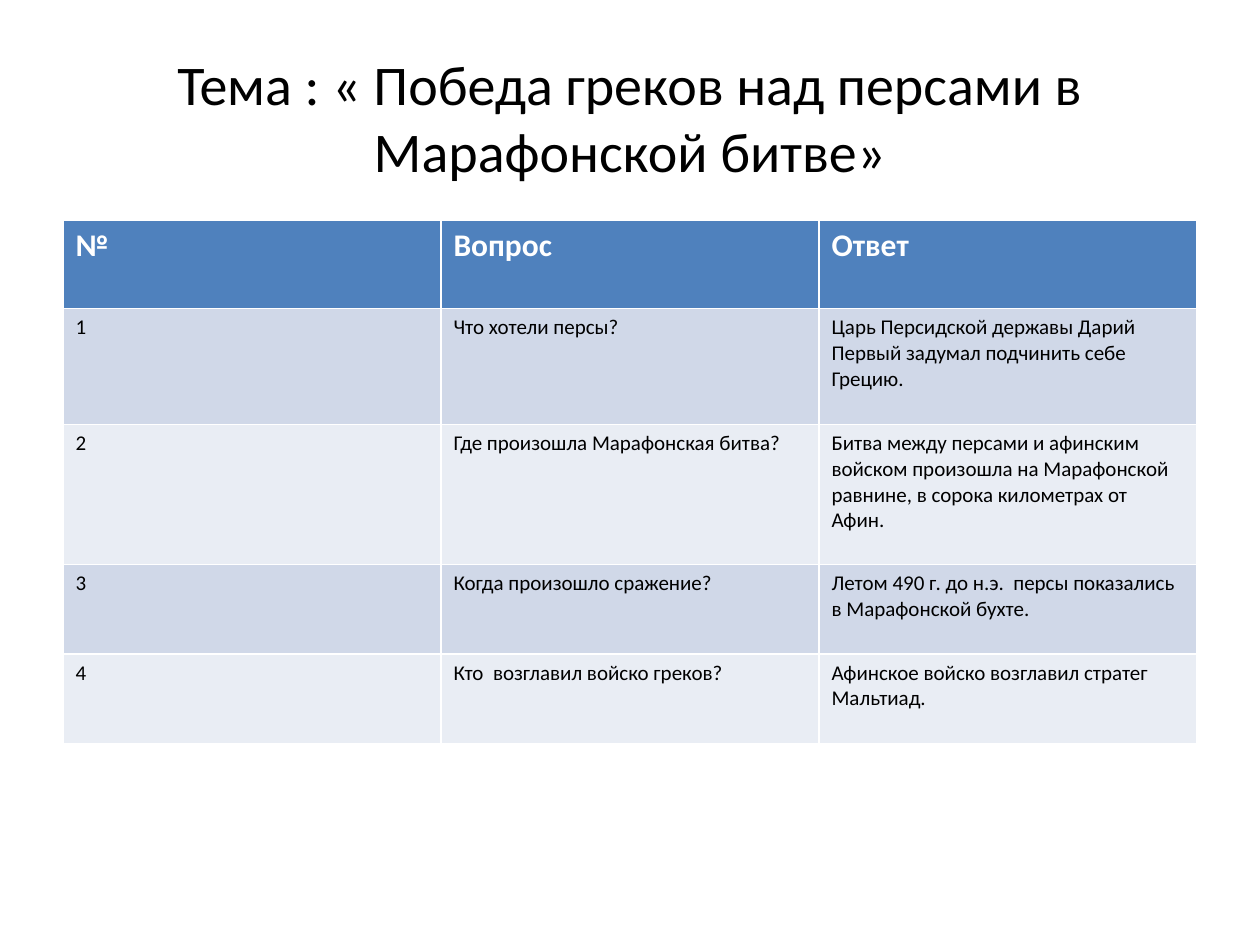
from pptx import Presentation
from pptx.dml.color import RGBColor
from pptx.enum.text import MSO_ANCHOR, PP_ALIGN
from pptx.util import Inches, Pt

CENTER = PP_ALIGN.CENTER
LEFT = PP_ALIGN.LEFT
MIDDLE = MSO_ANCHOR.MIDDLE
COLORS = {
    "text": "000000",
    "header_text": "FFFFFF",
    "header": "4F81BD",
    "odd_row": "D0D8E8",
    "even_row": "E9EDF4",
}
FORMATS = {
    "title": {"size": Pt(32), "bold": False, "name": "Calibri"},
    "header": {"size": Pt(18), "bold": True, "name": "Calibri"},
    "body": {"size": Pt(12), "bold": False, "name": "Calibri"},
}
TITLE = "Тема : « Победа греков над персами в Марафонской битве»"
ROWS = [
    ("№", "Вопрос", "Ответ"),
    ("1", "Что хотели персы?",
     "Царь Персидской державы Дарий Первый задумал подчинить себе  Грецию."),
    ("2", "Где произошла Марафонская битва?",
     "Битва между персами и афинским войском произошла на Марафонской "
     "равнине, в сорока километрах от Афин."),
    ("3", "Когда произошло сражение?",
     "Летом 490 г. до н.э.  персы показались в Марафонской бухте."),
    ("4", "Кто  возглавил войско греков?",
     "Афинское войско возглавил стратег Мальтиад."),
]
ROW_HEIGHTS = [0.7, 0.92, 1.11, 0.71, 0.71]


def write_text(text_frame, text, format_name, color_name, alignment):
    paragraph = text_frame.paragraphs[0]
    paragraph.alignment = alignment
    run = paragraph.add_run()
    run.text = text
    for attribute, value in FORMATS[format_name].items():
        setattr(run.font, attribute, value)
    run.font.color.rgb = RGBColor.from_string(COLORS[color_name])


presentation = Presentation()
presentation.slide_width = Inches(10)
presentation.slide_height = Inches(7.5)
slide = presentation.slides.add_slide(presentation.slide_layouts[6])

# Title and table share the same side margins
margin = int(presentation.slide_width * 0.05)
content_width = presentation.slide_width - 2 * margin

title_box = slide.shapes.add_textbox(
    margin, int(presentation.slide_height * 0.04), content_width, Inches(1.25))
title_box.text_frame.word_wrap = True
title_box.text_frame.vertical_anchor = MIDDLE
write_text(title_box.text_frame, TITLE, "title", "text", CENTER)

# The default table style supplies the white rules between cells
table = slide.shapes.add_table(
    len(ROWS), len(ROWS[0]), margin, Inches(1.75),
    content_width, Inches(sum(ROW_HEIGHTS))).table

for row_index, (texts, height) in enumerate(zip(ROWS, ROW_HEIGHTS)):
    table.rows[row_index].height = Inches(height)
    if row_index == 0:
        fill_name, format_name, color_name = "header", "header", "header_text"
    else:
        fill_name = "odd_row" if row_index % 2 else "even_row"
        format_name, color_name = "body", "text"
    for column_index, text in enumerate(texts):
        cell = table.cell(row_index, column_index)
        cell.fill.solid()
        cell.fill.fore_color.rgb = RGBColor.from_string(COLORS[fill_name])
        write_text(cell.text_frame, text, format_name, color_name, LEFT)

presentation.save("out.pptx")
